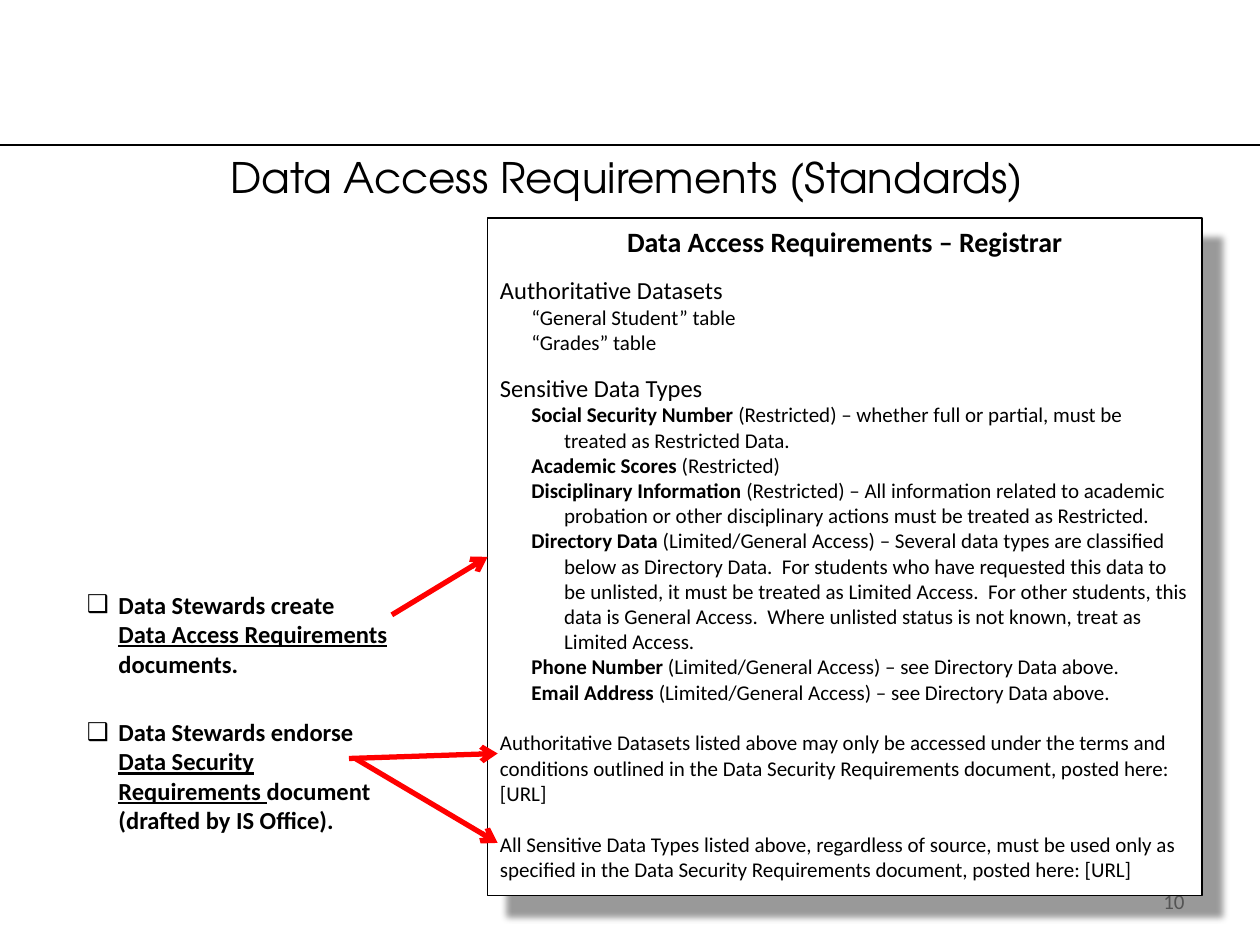
from lxml.etree import SubElement
from pptx import Presentation
from pptx.dml.color import RGBColor
from pptx.enum.shapes import MSO_CONNECTOR, MSO_SHAPE
from pptx.enum.text import MSO_ANCHOR, MSO_AUTO_SIZE, PP_ALIGN
from pptx.oxml.ns import qn
from pptx.util import Pt

PX = 9144  # EMU per px, 100 px to the inch
BODY_FONT, TITLE_FONT = "Calibri", "TeX Gyre Adventor"
BLACK, WHITE, RED, GRAY = "000000", "FFFFFF", "FF0000", "8C8C8C"

DATASETS = ["“General Student” table", "“Grades” table"]
DATA_TYPES = [
    ("Social Security Number ", "(Restricted) – whether full or partial, must be treated as Restricted Data."),
    ("Academic Scores", " (Restricted)"),
    ("Disciplinary Information", " (Restricted) – All information related to academic probation "
     "or other disciplinary actions must be treated as Restricted."),
    ("Directory Data", " (Limited/General Access) – Several data types are classified below as "
     "Directory Data.  For students who have requested this data to be unlisted, it must be "
     "treated as Limited Access.  For other students, this data is General Access.  Where "
     "unlisted status is not known, treat as Limited Access."),
    ("Phone Number", " (Limited/General Access) – see Directory Data above."),
    ("Email Address ", "(Limited/General Access) – see Directory Data above."),
]
TERMS = [
    "Authoritative Datasets listed above may only be accessed under the terms and conditions "
    "outlined in the Data Security Requirements document, posted here: [URL]",
    "All Sensitive Data Types listed above, regardless of source, must be used only as "
    "specified in the Data Security Requirements document, posted here: [URL]",
]


def px(n):
    return round(n * PX)


def rgb(color):
    return RGBColor.from_string(color)


def place(sp, box):
    sp.left, sp.top, sp.width, sp.height = map(px, box)


def add_run(p, text, size, bold=False, underline=False, color=BLACK, font=BODY_FONT):
    r = p.add_run()
    r.text = text
    r.font.name, r.font.size = font, Pt(size)
    r.font.bold, r.font.underline = bold, underline
    r.font.color.rgb = rgb(color)


def set_indent(p, left, first):
    pPr = p._p.get_or_add_pPr()
    pPr.set("marL", str(px(left)))
    pPr.set("indent", str(px(first)))
    return pPr


def frame(sp, anchor=MSO_ANCHOR.TOP):
    tf = sp.text_frame
    tf.word_wrap, tf.auto_size, tf.vertical_anchor = True, MSO_AUTO_SIZE.NONE, anchor
    return tf


def fill_title(sp, box, text):
    place(sp, box)
    p = frame(sp).paragraphs[0]
    p.alignment = PP_ALIGN.CENTER
    add_run(p, text, 24, font=TITLE_FONT)


def fill_step(sp, box, lead, document, rest):
    """Fill a body placeholder with one checkbox item naming a document."""
    place(sp, box)
    p = frame(sp).paragraphs[0]
    SubElement(set_indent(p, 25, -25), qn("a:buChar"), char="❑")
    p.space_before = Pt(0)
    add_run(p, lead, 14, bold=True)
    p.add_line_break()
    add_run(p, document, 14, bold=True, underline=True)
    add_run(p, rest, 14, bold=True)


def add_page_number(s, box, number):
    sp = s.shapes.add_textbox(*map(px, box))
    p = frame(sp, MSO_ANCHOR.MIDDLE).paragraphs[0]
    p.alignment = PP_ALIGN.RIGHT
    add_run(p, number, 12, color=GRAY)


def add_shadow(sp):
    sp.shadow.inherit = False
    effects = sp._element.spPr.find(qn("a:effectLst"))
    shadow = SubElement(effects, qn("a:outerShdw"), blurRad=str(Pt(4)), dist=str(Pt(16)),
                        dir="2700000", algn="tl", rotWithShape="0")
    color = SubElement(shadow, qn("a:srgbClr"), val=BLACK)
    SubElement(color, qn("a:alpha"), val="40000")


def add_requirements(s, box):
    """Add the shadowed page that shows a sample requirements document."""
    sp = s.shapes.add_shape(MSO_SHAPE.RECTANGLE, *map(px, box))
    sp.fill.solid()
    sp.fill.fore_color.rgb = rgb(WHITE)
    sp.line.color.rgb = rgb(BLACK)
    sp.line.width = Pt(0.75)
    add_shadow(sp)
    tf = frame(sp)

    def paragraph(*runs, size=12, before=0, left=0, first=0):
        p = tf.add_paragraph()
        p.alignment = PP_ALIGN.LEFT
        set_indent(p, left, first)
        p.space_before = Pt(before)
        for text, bold in runs:
            add_run(p, text, size, bold)

    heading = tf.paragraphs[0]
    heading.alignment = PP_ALIGN.CENTER
    add_run(heading, "Data Access Requirements – Registrar", 16, bold=True)
    paragraph(("Authoritative Datasets", False), size=14, before=10)
    for name in DATASETS:
        paragraph((name, False), left=25)
    paragraph(("Sensitive Data Types", False), size=14, before=10)
    for name, rule in DATA_TYPES:
        paragraph((name, True), (rule, False), left=51, first=-26)
    for term in TERMS:
        paragraph((term, False), before=14.6)
    return sp


def add_line(s, start, end, color, width, arrow=False):
    c = s.shapes.add_connector(MSO_CONNECTOR.STRAIGHT, *map(px, start + end))
    c.line.color.rgb = rgb(color)
    c.line.width = Pt(width)
    if arrow:
        SubElement(c.line._get_or_add_ln(), qn("a:tailEnd"), type="arrow")
    SubElement(c._element.spPr, qn("a:effectLst"))
    return c


def main():
    prs = Presentation()
    prs.slide_width, prs.slide_height = px(1000), px(750)
    s = prs.slides.add_slide(prs.slide_layouts[3])
    title, create, endorse = s.placeholders

    add_line(s, (0, 115), (1000, 115), BLACK, 1)
    add_page_number(s, (900, 695, 50, 40), "10")
    fill_title(title, (21, 115, 953, 50), "Data Access Requirements (Standards)")
    fill_step(create, (59, 463, 268, 81), "Data Stewards create",
              "Data Access Requirements ", "documents.")
    fill_step(endorse, (59, 564, 268, 104), "Data Stewards endorse",
              "Data Security Requirements ", "document (drafted by IS Office).")
    page = add_requirements(s, (387, 173, 567, 538))

    add_line(s, (311, 488), (387, 442), RED, 3, arrow=True).end_connect(page, 1)
    add_line(s, (277, 602), (395, 598), RED, 3, arrow=True)
    add_line(s, (282, 602), (395, 669), RED, 3, arrow=True)
    prs.save("out.pptx")


if __name__ == "__main__":
    main()
